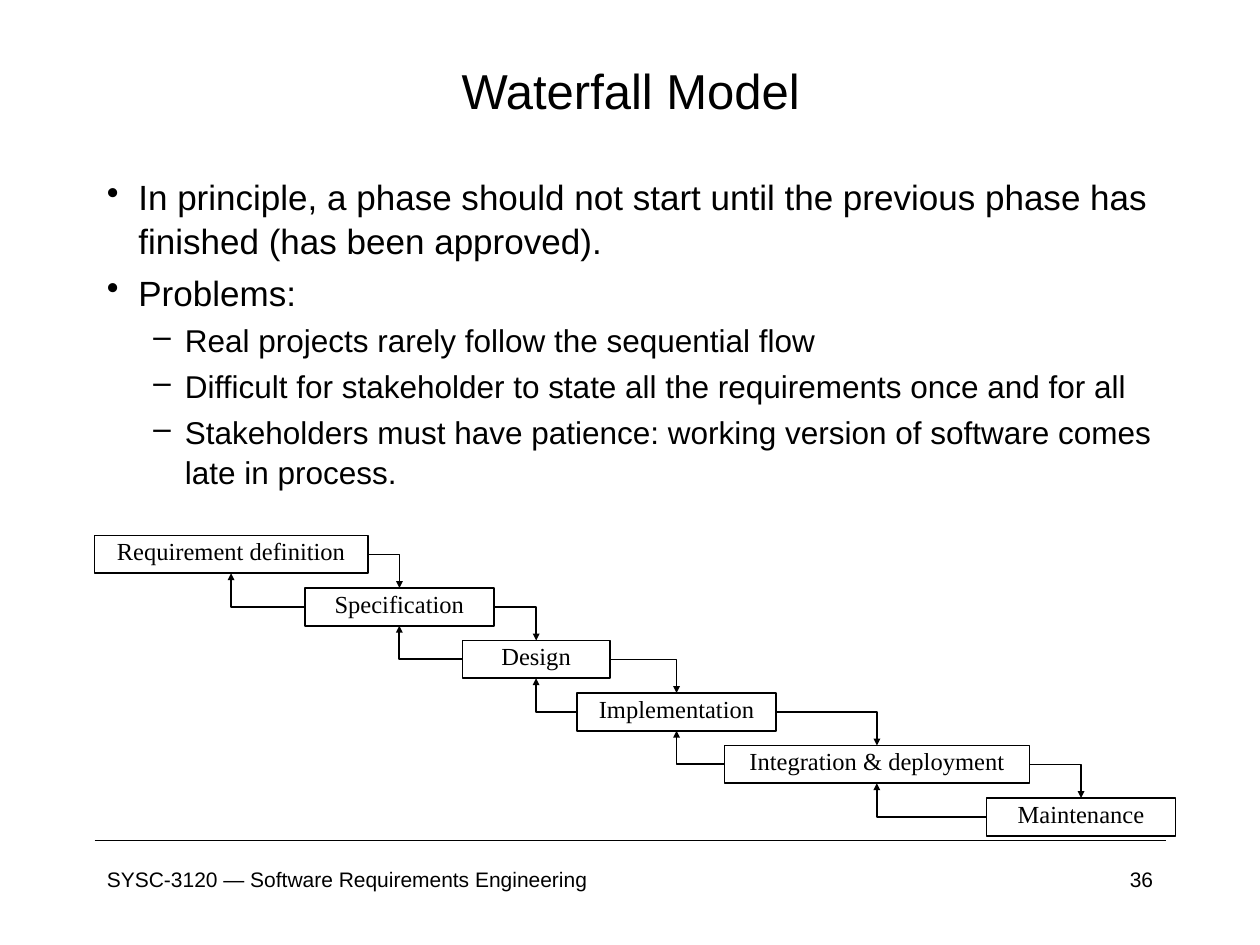
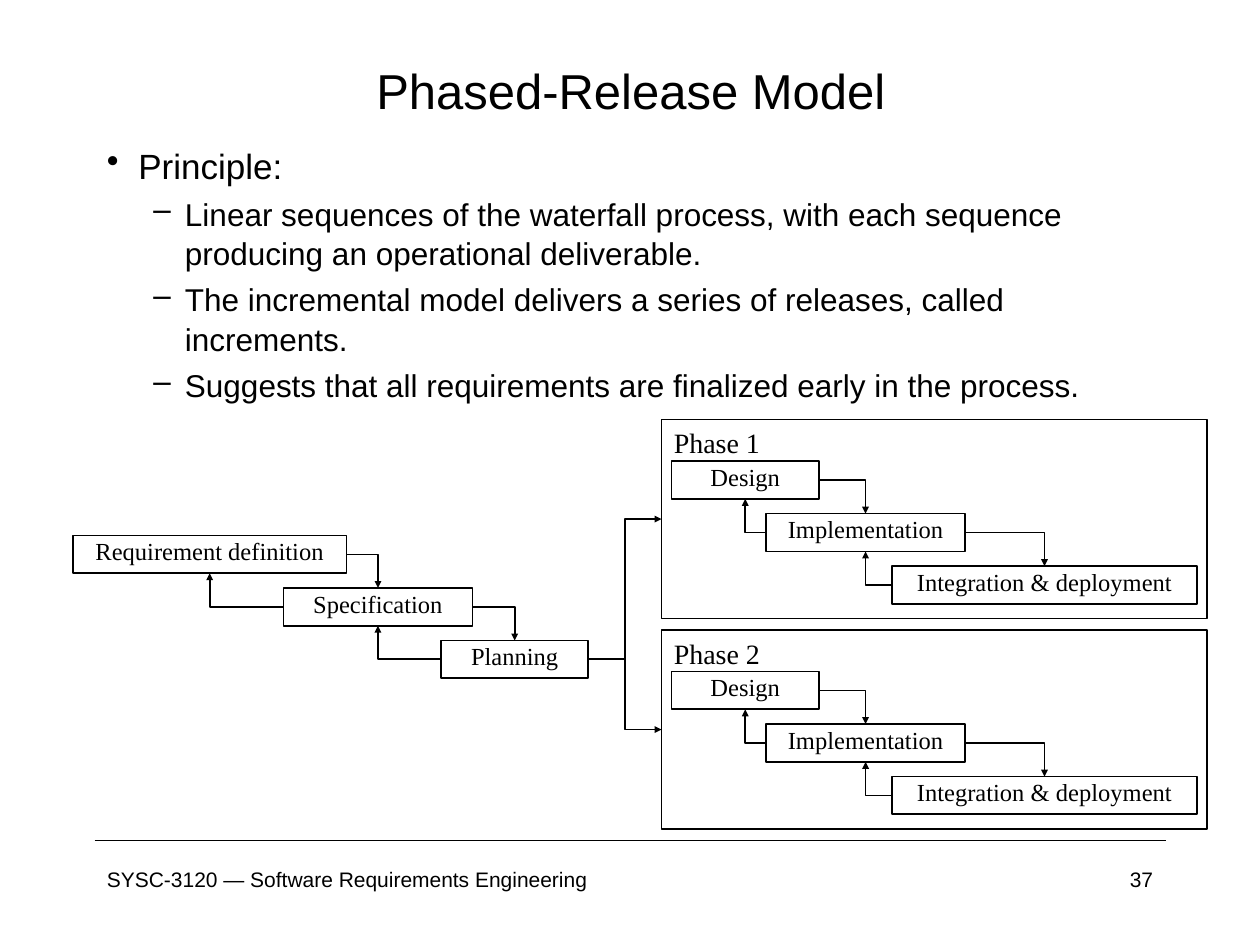
import pptx
import pptx.dml.color
import pptx.enum.shapes
import pptx.enum.text
import pptx.oxml.ns
import pptx.util
import lxml.etree

Inches, Pt = pptx.util.Inches, pptx.util.Pt
SHAPE = pptx.enum.shapes.MSO_SHAPE
CONNECTOR = pptx.enum.shapes.MSO_CONNECTOR
ALIGN = pptx.enum.text.PP_ALIGN
ANCHOR = pptx.enum.text.MSO_ANCHOR
qn = pptx.oxml.ns.qn

COLORS = {"ink": "000000"}
SANS, SERIF = "Arial", "Times New Roman"
FOOTER = "SYSC-3120 — Software Requirements Engineering"

WATERFALL = {
    "title": "Waterfall Model",
    "number": "36",
    "points_top": 1.33,
    "points": [
        (0, "In principle, a phase should not start until the previous phase has finished (has been approved)."),
        (0, "Problems:"),
        (1, "Real projects rarely follow the sequential flow"),
        (1, "Difficult for stakeholder to state all the requirements once and for all"),
        (1, "Stakeholders must have patience: working version of software comes late in process."),
    ],
    "stages": [
        ("Requirement definition", 0.75),
        ("Specification", 2.42),
        ("Design", 3.67),
        ("Implementation", 4.58),
        ("Integration & deployment", 5.75),
        ("Maintenance", 7.83),
    ],
    "phases": [],
}
PHASED = {
    "title": "Phased-Release Model",
    "number": "37",
    "points_top": 1.08,
    "points": [
        (0, "Principle:"),
        (1, "Linear sequences of the waterfall process, with each sequence producing an operational deliverable."),
        (1, "The incremental model delivers a series of releases, called increments."),
        (1, "Suggests that all requirements are finalized early in the process."),
    ],
    "stages": [
        ("Requirement definition", 0.58),
        ("Specification", 2.25),
        ("Planning", 3.5),
    ],
    "phases": ["Phase 1", "Phase 2"],
}
PHASE_STAGES = [
    ("Design", 5.33),
    ("Implementation", 6.08),
    ("Integration & deployment", 7.08),
]
STAGE_WIDTHS = {
    "Requirement definition": 2.17,
    "Specification": 1.5,
    "Design": 1.17,
    "Planning": 1.17,
    "Implementation": 1.58,
    "Integration & deployment": 2.42,
    "Maintenance": 1.5,
}
STAGES_TOP, STAGE_STEP, STAGE_HEIGHT = 4.25, 5 / 12, 0.3
PHASE_LEFT, PHASE_TOP, PHASE_WIDTH, PHASE_HEIGHT = 5.25, 3.33, 4.33, 1.58
PHASE_STEP, PHASE_HEADING = 1.67, 0.33
TOP, LEFT, BOTTOM, RIGHT = range(4)
LEVELS = [("•", 20, 0.25), ("–", 18, 0.62)]
HANG = 0.25


def ink():
    return pptx.dml.color.RGBColor.from_string(COLORS["ink"])


def style(paragraph, size, face, align=ALIGN.LEFT):
    paragraph.alignment = align
    paragraph.font.size = Pt(size)
    paragraph.font.name = face
    paragraph.font.color.rgb = ink()


def add_text(slide, box, text, size, align=ALIGN.LEFT, anchor=ANCHOR.TOP):
    frame = slide.shapes.add_textbox(*map(Inches, box)).text_frame
    frame.word_wrap = True
    frame.vertical_anchor = anchor
    frame.text = text
    style(frame.paragraphs[0], size, SANS, align)


def add_points(slide, top, points):
    frame = slide.shapes.add_textbox(Inches(0.75), Inches(top), Inches(8.5), Inches(2.75)).text_frame
    frame.word_wrap = True
    for index, (level, text) in enumerate(points):
        paragraph = frame.paragraphs[0] if index == 0 else frame.add_paragraph()
        bullet, size, indent = LEVELS[level]
        paragraph.text = text
        paragraph.level = level
        paragraph.line_spacing = 1.05
        paragraph.space_before = Pt(size * 0.2)
        properties = paragraph._p.get_or_add_pPr()
        properties.set("marL", str(Inches(indent)))
        properties.set("indent", str(-Inches(HANG)))
        lxml.etree.SubElement(properties, qn("a:buChar")).set("char", bullet)
        style(paragraph, size, SANS)


def add_box(slide, box, text, size, align, anchor):
    shape = slide.shapes.add_shape(SHAPE.RECTANGLE, *map(Inches, box))
    shape.shadow.inherit = False
    shape.fill.background()
    shape.line.color.rgb = ink()
    shape.line.width = Pt(1)
    shape.text_frame.word_wrap = True
    shape.text_frame.vertical_anchor = anchor
    shape.text_frame.text = text
    style(shape.text_frame.paragraphs[0], size, SERIF, align)
    return shape


def add_line(slide, kind, ends=(0, 0, 0, 0)):
    line = slide.shapes.add_connector(kind, *map(Inches, ends))
    line.line.color.rgb = ink()
    line.line.width = Pt(1)
    lxml.etree.SubElement(line.element.spPr, qn("a:effectLst"))
    return line


def add_arrow(slide, start, start_side, end, end_side):
    arrow = add_line(slide, CONNECTOR.ELBOW)
    arrow.begin_connect(start, start_side)
    arrow.end_connect(end, end_side)
    properties = arrow.element.spPr
    if end_side in (TOP, BOTTOM):
        properties.find(qn("a:prstGeom")).set("prst", "bentConnector2")
    head = lxml.etree.SubElement(properties.find(qn("a:ln")), qn("a:tailEnd"))
    for key, value in (("type", "triangle"), ("w", "sm"), ("len", "sm")):
        head.set(key, value)


def add_cascade(slide, stages, top):
    boxes = []
    for row, (name, left) in enumerate(stages):
        place = (left, top + row * STAGE_STEP, STAGE_WIDTHS[name], STAGE_HEIGHT)
        box = add_box(slide, place, name, 14, ALIGN.CENTER, ANCHOR.MIDDLE)
        box.text_frame.paragraphs[0].line_spacing = 0.7
        boxes.append(box)
    for upper, lower in zip(boxes, boxes[1:]):
        add_arrow(slide, upper, RIGHT, lower, TOP)
        add_arrow(slide, lower, LEFT, upper, BOTTOM)
    return boxes


def add_model(deck, model):
    slide = deck.slides.add_slide(deck.slide_layouts[6])
    add_line(slide, CONNECTOR.STRAIGHT, (0.75, 6.67, 9.25, 6.67))
    add_text(slide, (0.75, 6.83, 4.92, 0.5), FOOTER, 12)
    add_text(slide, (7.17, 6.83, 2.08, 0.5), model["number"], 12, ALIGN.RIGHT)
    add_text(slide, (0.42, 0.42, 9.17, 0.58), model["title"], 28, ALIGN.CENTER, ANCHOR.MIDDLE)
    add_points(slide, model["points_top"], model["points"])
    stages = add_cascade(slide, model["stages"], STAGES_TOP)
    for index, heading in enumerate(model["phases"]):
        top = PHASE_TOP + index * PHASE_STEP
        place = (PHASE_LEFT, top, PHASE_WIDTH, PHASE_HEIGHT)
        phase = add_box(slide, place, heading, 16, ALIGN.LEFT, ANCHOR.TOP)
        add_cascade(slide, PHASE_STAGES, top + PHASE_HEADING)
        add_arrow(slide, stages[-1], RIGHT, phase, LEFT)


def main():
    deck = pptx.Presentation()
    deck.slide_width, deck.slide_height = Inches(10), Inches(7.5)
    for model in (WATERFALL, PHASED):
        add_model(deck, model)
    deck.save("out.pptx")


if __name__ == "__main__":
    main()
